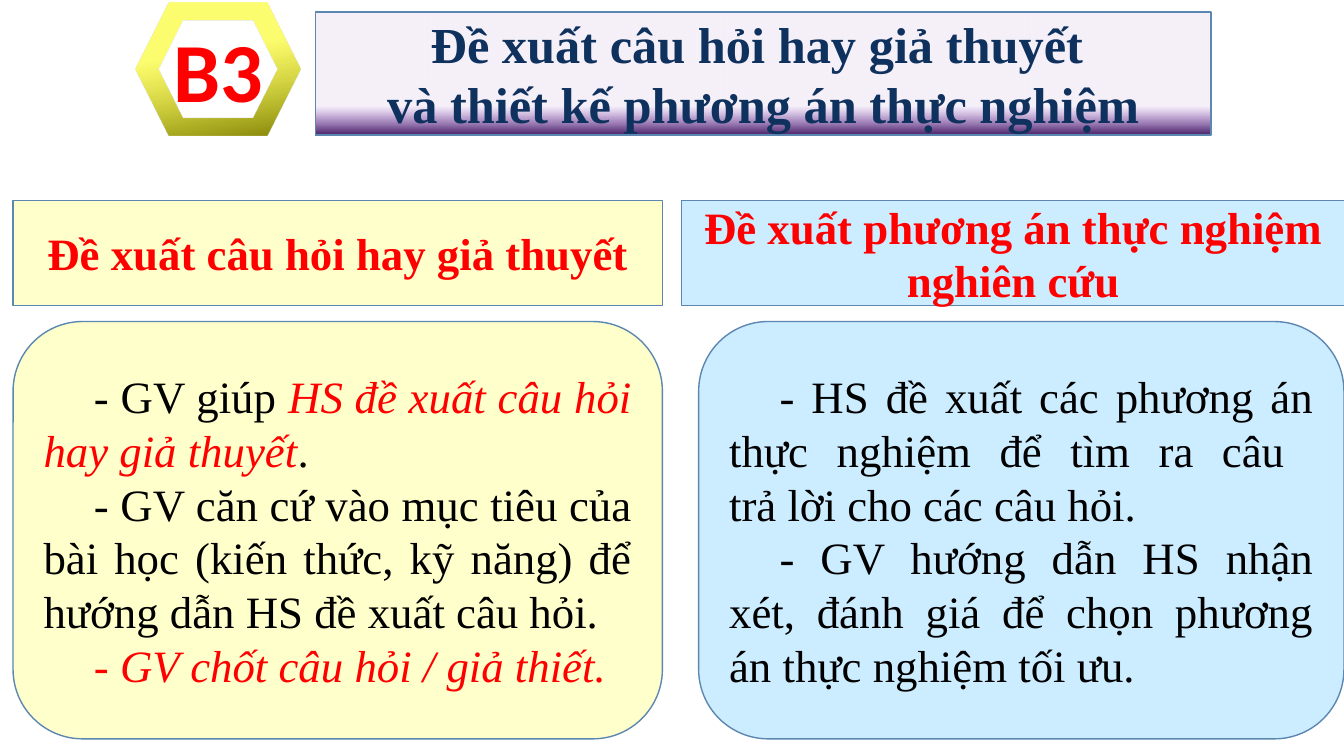
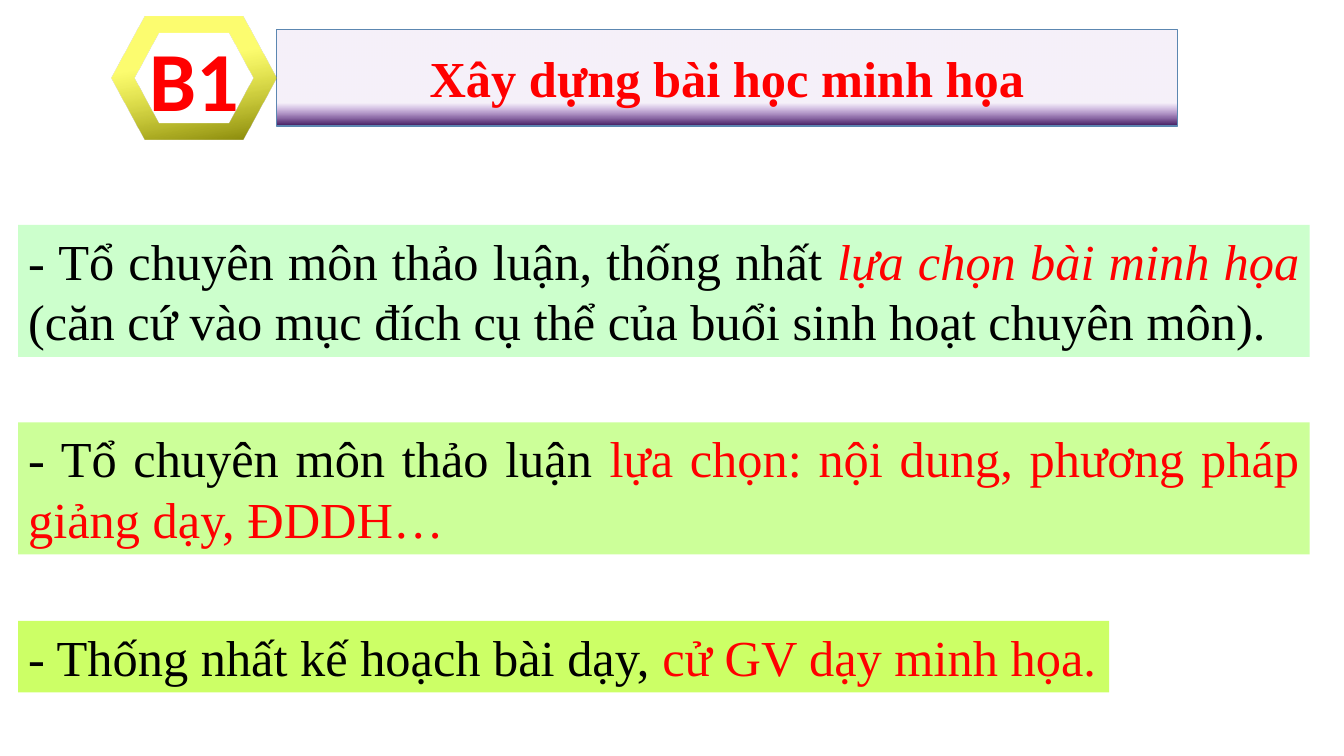
from dataclasses import dataclass

from lxml.etree import SubElement
from pptx import Presentation
from pptx.dml.color import RGBColor
from pptx.enum.text import MSO_ANCHOR, MSO_AUTO_SIZE, PP_ALIGN
from pptx.oxml import parse_xml
from pptx.oxml.ns import nsdecls, qn
from pptx.util import Inches, Pt

RED = RGBColor(0xFF, 0x00, 0x00)
BLACK = RGBColor(0x00, 0x00, 0x00)
NAVY = RGBColor(0x0F, 0x31, 0x5E)
EDGE = RGBColor(0x5C, 0x87, 0xB1)
CREAM = RGBColor(0xFF, 0xFF, 0xCC)
SKY = RGBColor(0xCC, 0xEC, 0xFF)
MINT = RGBColor(0xCC, 0xFF, 0xCC)
LIME = RGBColor(0xCC, 0xFF, 0x99)
BRIGHT_LIME = RGBColor(0xCC, 0xFF, 0x66)
PURPLE = RGBColor(0x7B, 0x32, 0xB2)
DARK_PURPLE = RGBColor(0x40, 0x1A, 0x5D)
YELLOW = RGBColor(0xFB, 0xFB, 0x11)
OLIVE = RGBColor(0x83, 0x83, 0x09)
SERIF = "Times New Roman"
COMPARISON = 4


@dataclass(frozen=True)
class Run:
    text: str
    color: RGBColor = BLACK
    italic: bool = False


@dataclass(frozen=True)
class Gradient:
    start: RGBColor
    alpha: int
    pos: int
    end: RGBColor
    angle: int


@dataclass(frozen=True)
class Box:
    at: tuple[float, float, float, float]
    fill: RGBColor | Gradient
    paras: list[list[Run]]
    size: int = 32
    bold: bool = False
    align: PP_ALIGN = PP_ALIGN.JUSTIFY
    anchor: MSO_ANCHOR = MSO_ANCHOR.MIDDLE
    geom: str = "rect"
    outline: bool = True
    indent: float = 0


BAR = Gradient(PURPLE, 7, 76, DARK_PURPLE, 90)
BADGE = Gradient(YELLOW, 60, 38, OLIVE, 80)


def set_text(shape, paras: list[list[Run]], *, size: int, font: str = SERIF,
             bold: bool = False, align: PP_ALIGN = PP_ALIGN.CENTER,
             anchor: MSO_ANCHOR = MSO_ANCHOR.MIDDLE, indent: float = 0,
             wrap: bool = True) -> None:
    tf = shape.text_frame
    tf.word_wrap = wrap
    tf.auto_size = MSO_AUTO_SIZE.NONE
    tf.vertical_anchor = anchor
    for i, runs in enumerate(paras):
        p = tf.paragraphs[0] if i == 0 else tf.add_paragraph()
        p.alignment = align
        p.space_before = Pt(0)
        ppr = p._p.get_or_add_pPr()
        ppr.set("marL", "0")
        ppr.set("indent", str(Inches(indent)))
        SubElement(ppr, qn("a:buNone"))
        for run in runs:
            for j, line in enumerate(run.text.split("\n")):
                if j:
                    p.add_line_break()
                r = p.add_run()
                r.text = line
                r.font.name = font
                r.font.size = Pt(size)
                r.font.bold = bold
                r.font.italic = run.italic
                r.font.color.rgb = run.color


def set_fill(shape, fill: RGBColor | Gradient) -> None:
    shape.fill.solid()
    if isinstance(fill, RGBColor):
        shape.fill.fore_color.rgb = fill
        return
    grad = parse_xml(
        f'<a:gradFill {nsdecls("a")} rotWithShape="1"><a:gsLst>'
        f'<a:gs pos="{fill.pos * 1000}"><a:srgbClr val="{fill.start}">'
        f'<a:alpha val="{fill.alpha * 1000}"/></a:srgbClr></a:gs>'
        f'<a:gs pos="100000"><a:srgbClr val="{fill.end}"/></a:gs></a:gsLst>'
        f'<a:lin ang="{fill.angle * 60000}" scaled="0"/></a:gradFill>')
    spPr = shape._element.spPr
    spPr.replace(spPr.find(qn("a:solidFill")), grad)


def fill_placeholder(sp, box: Box) -> None:
    sp.left, sp.top, sp.width, sp.height = map(Inches, box.at)
    geom = parse_xml(f'<a:prstGeom {nsdecls("a")} prst="{box.geom}"><a:avLst/></a:prstGeom>')
    sp._element.spPr.insert(1, geom)
    set_fill(sp, box.fill)
    if box.outline:
        sp.line.color.rgb = EDGE
        sp.line.width = Pt(1)
    set_text(sp, box.paras, size=box.size, bold=box.bold, align=box.align,
             anchor=box.anchor, indent=box.indent)


def hexagon(x: float, y: float, w: float, h: float, shoulder: float) -> list[tuple[int, int]]:
    points = [(x + shoulder, y), (x + w - shoulder, y), (x + w, y + h / 2),
              (x + w - shoulder, y + h), (x + shoulder, y + h), (x, y + h / 2)]
    return [(Inches(px), Inches(py)) for px, py in points]


def add_badge(s, label: str, x: float, y: float, w: float, h: float) -> None:
    dx, dy = 0.23, 0.135 * h
    outer = hexagon(x, y, w, h, 0.33)
    inner = hexagon(x + dx, y + dy, w - 2 * dx, h - 2 * dy, 0.24)[::-1]
    fb = s.shapes.build_freeform(*outer[0])
    fb.add_line_segments(outer[1:], close=True)
    fb.move_to(*inner[0])
    fb.add_line_segments(inner[1:], close=True)
    sp = fb.convert_to_shape()
    sp.shadow.inherit = False
    set_fill(sp, BADGE)
    sp.line.fill.background()
    set_text(sp, [[Run(label, RED)]], size=60, font="Calibri", bold=True, wrap=False)


def title(at: tuple[float, float, float, float], color: RGBColor, *lines: str) -> Box:
    return Box(at, BAR, [[Run(line, color)] for line in lines], size=36, bold=True,
               align=PP_ALIGN.CENTER, geom="roundRect")


def heading(x: float, w: float, fill: RGBColor, text: str) -> Box:
    return Box((x, 1.99, w, 1.04), fill, [[Run(text, RED)]], bold=True,
               align=PP_ALIGN.CENTER)


def panel(x: float, w: float, fill: RGBColor, *paras: list[Run]) -> Box:
    return Box((x, 3.19, w, 4.14), fill, list(paras), geom="roundRect", indent=0.5)


def strip(y: float, w: float, h: float, fill: RGBColor, *runs: Run) -> Box:
    return Box((0.18, y, w, h), fill, [list(runs)], size=36, anchor=MSO_ANCHOR.TOP,
               outline=False)


def add_slide(prs, label: str, badge_at: tuple[float, float, float, float],
              boxes: list[Box]) -> None:
    s = prs.slides.add_slide(prs.slide_layouts[COMPARISON])
    placeholders = list(s.placeholders)
    for sp, box in zip(placeholders, boxes):
        fill_placeholder(sp, box)
    for sp in placeholders[len(boxes):]:
        sp._element.getparent().remove(sp._element)
    add_badge(s, label, *badge_at)


def main() -> None:
    prs = Presentation()
    prs.slide_width, prs.slide_height = Inches(13.33), Inches(7.5)

    add_slide(prs, "B3", (1.35, 0.03, 1.63, 1.31), [
        title((3.13, 0.12, 8.88, 1.22), NAVY, "Đề xuất câu hỏi hay giả thuyết ",
              "và thiết kế phương án thực nghiệm"),
        heading(0.13, 6.44, CREAM, "Đề xuất câu hỏi hay giả thuyết"),
        panel(0.13, 6.44, CREAM,
              [Run("- GV giúp "), Run("HS đề xuất câu hỏi hay giả thuyết", RED, True),
               Run(". ")],
              [Run("- GV căn cứ vào mục tiêu của bài học (kiến thức, kỹ năng) để "
                   "hướng dẫn HS đề xuất câu hỏi.")],
              [Run("- ", RED), Run("GV chốt câu hỏi / giả thiết.", RED, True)]),
        heading(6.76, 6.58, SKY, "Đề xuất phương án thực nghiệm nghiên cứu"),
        panel(6.93, 6.4, SKY,
              [Run("- HS đề xuất các phương án thực nghiệm để tìm ra câu \n"
                   "trả lời cho các câu hỏi. ")],
              [Run("- GV hướng dẫn HS nhận xét, đánh giá để chọn phương án "
                   "thực nghiệm tối ưu.")]),
    ])

    add_slide(prs, "B1", (1.11, 0.16, 1.63, 1.22), [
        title((2.74, 0.29, 8.94, 0.96), RED, "Xây dựng bài học minh họa"),
        strip(2.23, 12.81, 1.31, MINT,
              Run("- Tổ chuyên môn thảo luận, thống nhất "),
              Run("lựa chọn bài minh họa ", RED, True),
              Run("(căn cứ vào mục đích cụ thể của buổi sinh hoạt chuyên môn).")),
        strip(4.19, 12.81, 1.31, LIME,
              Run("- Tổ chuyên môn thảo luận "),
              Run("lựa chọn: nội dung, phương pháp giảng dạy, ĐDDH…", RED)),
        strip(6.16, 10.82, 0.71, BRIGHT_LIME,
              Run("- Thống nhất kế hoạch bài dạy, "),
              Run("cử GV dạy minh họa.", RED)),
    ])
    prs.save("out.pptx")


if __name__ == "__main__":
    main()
